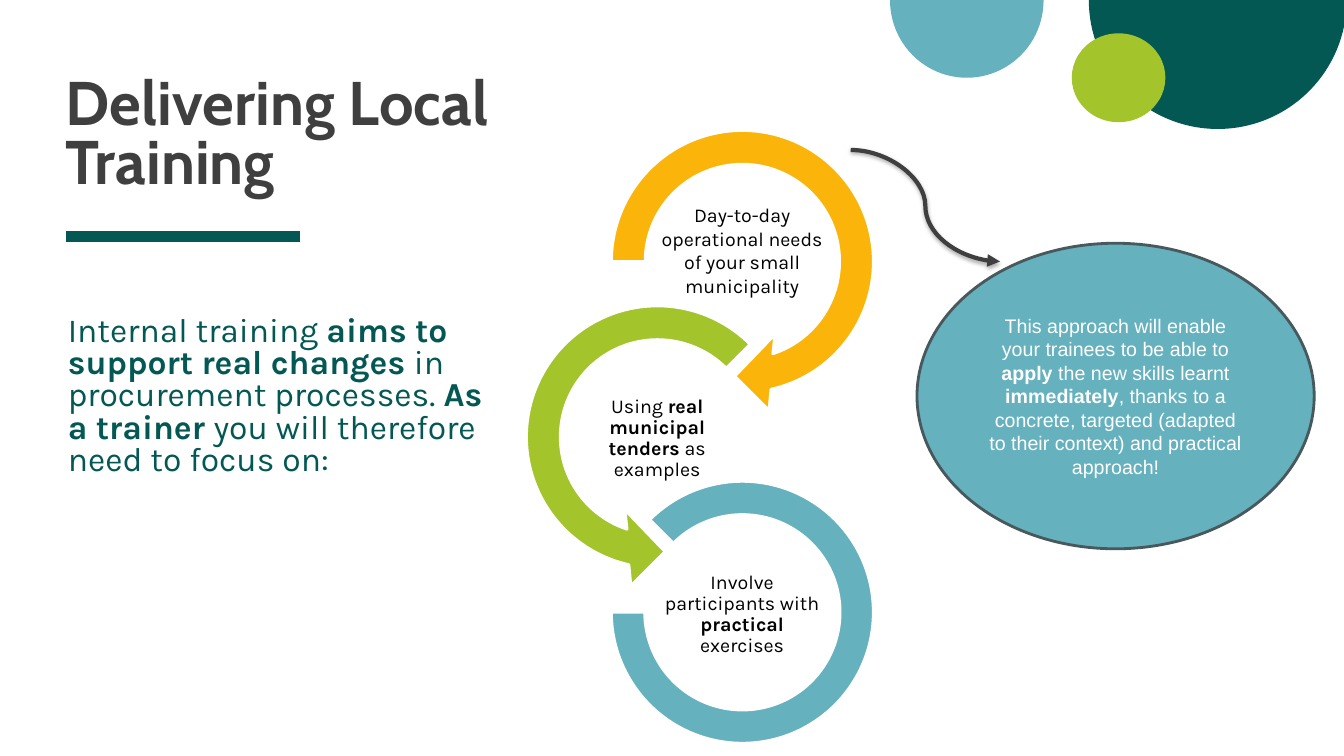
import math
import pptx
import pptx.util
import pptx.dml.color
import pptx.enum.shapes
import pptx.enum.text
import pptx.oxml
import pptx.oxml.ns

Cm, Pt = pptx.util.Cm, pptx.util.Pt
KIND = pptx.enum.shapes.MSO_SHAPE
LINK = pptx.enum.shapes.MSO_CONNECTOR
ALIGN = pptx.enum.text.PP_ALIGN
ANCHOR = pptx.enum.text.MSO_ANCHOR
SPACE = pptx.oxml.ns.nsdecls("a")

# Content: text between asterisks is bold; lengths are in cm
HUES = {"dark": "035854", "blue": "65B1BE", "green": "A3C42A", "gold": "FBB50A",
        "grey": "3F3F3F", "edge": "47595C", "white": "FFFFFF", "black": "000000"}
TITLE = "*Delivering Local Training*"
INTRO = ("Internal training *aims to support real changes *in procurement processes. "
         "*As a trainer *you will therefore need to focus on:")
NOTE = ("This approach will enable your trainees to be able to *apply *the new skills learnt "
        "*immediately*, thanks to a concrete, targeted (adapted to their context) "
        "and practical approach!")
# text, colour, side the arrow turns to, start angle (None for the last ring),
# line spacing, text offset, text height
RINGS = [
    ("Day-to-day operational needs of your small municipality", "gold", 1, 180, 1.0, -0.28, 2.72),
    ("Using *real municipal tenders *as examples", "green", -1, 225, 0.9, 0.04, 2.13),
    ("Involve participants with *practical *exercises", "blue", 1, None, 0.9, 0.06, 2.13),
]
# kind, place, colour, adjustments
DOTS = [
    (KIND.PIE, (27.44, -3.25, 6.5, 6.5), "dark", (0, 107.96)),
    (KIND.PIE, (22.43, -1.95, 3.87, 3.91), "blue", (0, 108.52)),
    (KIND.OVAL, (27.01, 0.84, 2.36, 2.24), "green", ()),
]
MID, SHIFT, TOP, STEP = 17.64, 1.07, 6.59, 4.42
OUTER, INNER, HALF = 3.3, 2.45, 3.85
HEAD = [(0.67, 3.75), (-0.19, 2.89), (0.82, 1.84)]

deck = pptx.Presentation()
deck.slide_width, deck.slide_height = Cm(33.87), Cm(19.05)
slide = deck.slides.add_slide(deck.slide_layouts[5])
shapes = slide.shapes


def hue(name):
    return pptx.dml.color.RGBColor.from_string(HUES[name])


def write(shape, text, size=14, font="Karla", color="black", align=ALIGN.CENTER,
          anchor=ANCHOR.MIDDLE, space=1.0, pads=(0.03, 0.03, 0.03, 0.03), indent=0):
    frame = shape.text_frame
    frame.word_wrap = True
    frame.auto_size = pptx.enum.text.MSO_AUTO_SIZE.NONE
    frame.vertical_anchor = anchor
    (frame.margin_left, frame.margin_top,
     frame.margin_right, frame.margin_bottom) = map(Cm, pads)
    para = frame.paragraphs[0]
    para.alignment, para.line_spacing = align, space
    para.space_before = Pt(0)
    if indent:
        para._p.get_or_add_pPr().set("marL", str(Cm(indent)))
    for i, part in enumerate(text.split("*")):
        if part:
            run = para.add_run()
            run.text = part
            run.font.size, run.font.name = Pt(size), font
            run.font.bold = i % 2 == 1
            run.font.color.rgb = hue(color)


def paint(shape, fill, line=None):
    shape.shadow.inherit = False
    shape.fill.solid()
    shape.fill.fore_color.rgb = hue(fill)
    if line:
        shape.line.color.rgb = hue(line)
        shape.line.width = Pt(2)
    else:
        shape.line.fill.background()


def draw(kind, place, fill, line=None, adj=()):
    shape = shapes.add_shape(kind, *map(Cm, place))
    for i, value in enumerate(adj):
        shape.adjustments[i] = value
    paint(shape, fill, line)
    return shape


def join(kind, ends, color, width, inner=""):
    link = shapes.add_connector(kind, *map(Cm, ends))
    link.line.color.rgb = hue(color)
    link.line.width = Pt(width)
    link._element.spPr.append(
        pptx.oxml.parse_xml(f"<a:effectLst {SPACE}>{inner}</a:effectLst>"))
    return link


def arc(radius, first, last):
    """Three Bezier curves along a circle, as steps for a path."""
    turn = math.radians(last - first) / 3
    pull = 4 / 3 * math.tan(turn / 4)
    steps = []
    for i in range(3):
        a = math.radians(first) + i * turn
        b = a + turn
        spots = [(math.cos(a) - pull * math.sin(a), math.sin(a) + pull * math.cos(a)),
                 (math.cos(b) + pull * math.sin(b), math.sin(b) - pull * math.cos(b)),
                 (math.cos(b), math.sin(b))]
        steps.append(("cubicBezTo", [(radius * x, radius * y) for x, y in spots]))
    return steps


def polar(radius, angle):
    turn = math.radians(angle)
    return radius * math.cos(turn), radius * math.sin(turn)


def arrow(x, y, side, start, color):
    # Square frame first, then the curved outline inside it
    pen = shapes.build_freeform(Cm(x - HALF), Cm(y - HALF))
    pen.add_line_segments([(Cm(x + HALF), Cm(y - HALF)), (Cm(x + HALF), Cm(y + HALF))])
    shape = pen.convert_to_shape()
    steps = [("moveTo", [polar(OUTER, start)]), *arc(OUTER, start, 437.4)]
    steps += [("lnTo", [spot]) for spot in HEAD + [polar(INNER, 431.8)]]
    steps += arc(INNER, 431.8, start)
    route = shape._element.spPr.find(".//" + pptx.oxml.ns.qn("a:path"))
    for old in list(route):
        route.remove(old)
    for name, spots in steps:
        dots = "".join(f'<a:pt x="{Cm(HALF + side * dx)}" y="{Cm(HALF + dy)}"/>'
                       for dx, dy in spots)
        route.append(pptx.oxml.parse_xml(f"<a:{name} {SPACE}>{dots}</a:{name}>"))
    route.append(pptx.oxml.parse_xml(f"<a:close {SPACE}/>"))
    paint(shape, color, "white")


def box(x, y, w, h):
    return shapes.add_textbox(Cm(x), Cm(y), Cm(w), Cm(h))


# Corner circles and rule
for kind, place, color, adj in DOTS:
    draw(kind, place, color, adj=adj)
join(LINK.STRAIGHT, (1.66, 5.96, 7.57, 5.96), "dark", 8)

# Title and introduction
title = shapes.title
title.left, title.top, title.width, title.height = map(Cm, (1.66, 0.53, 14.76, 4.42))
write(title, TITLE, size=44, font="Cabin", color="grey", align=ALIGN.LEFT,
      anchor=ANCHOR.BOTTOM, space=0.8, pads=(0, 0, 0, 0))
write(box(1.07, 7.34, 11.1, 11.18), INTRO, size=24, color="dark", align=ALIGN.LEFT,
      anchor=ANCHOR.TOP, space=0.8, pads=(0, 0.64, 0, 0), indent=0.64)

# Chain of rings
for i, (text, color, side, start, space, drop, tall) in enumerate(RINGS):
    x, y = MID + side * SHIFT, TOP + i * STEP
    if start is None:
        draw(KIND.BLOCK_ARC, (x - OUTER, y - OUTER, 2 * OUTER, 2 * OUTER),
             color, "white", (135, 108, 0.127))
    else:
        arrow(x, y, side, start, color)
    write(box(x - 2.14, y + drop - tall / 2, 4.27, tall), text, space=space)

# Curved arrow and note
shade = ('<a:outerShdw blurRad="40000" dist="23000" dir="5400000" rotWithShape="0">'
         '<a:srgbClr val="000000"><a:alpha val="35000"/></a:srgbClr></a:outerShdw>')
curve = join(LINK.CURVE, (21.44, 3.78, 25.2, 6.59), "grey", 3, shade)
curve._element.spPr.find(pptx.oxml.ns.qn("a:ln")).append(pptx.oxml.parse_xml(
    f'<a:tailEnd {SPACE} type="triangle"/>'))
note = draw(KIND.OVAL, (23.11, 6.13, 10.01, 7.7), "blue", "edge")
write(note, NOTE, font="Arial", color="white", pads=(0.25, 0.13, 0.25, 0.13))

deck.save("out.pptx")
